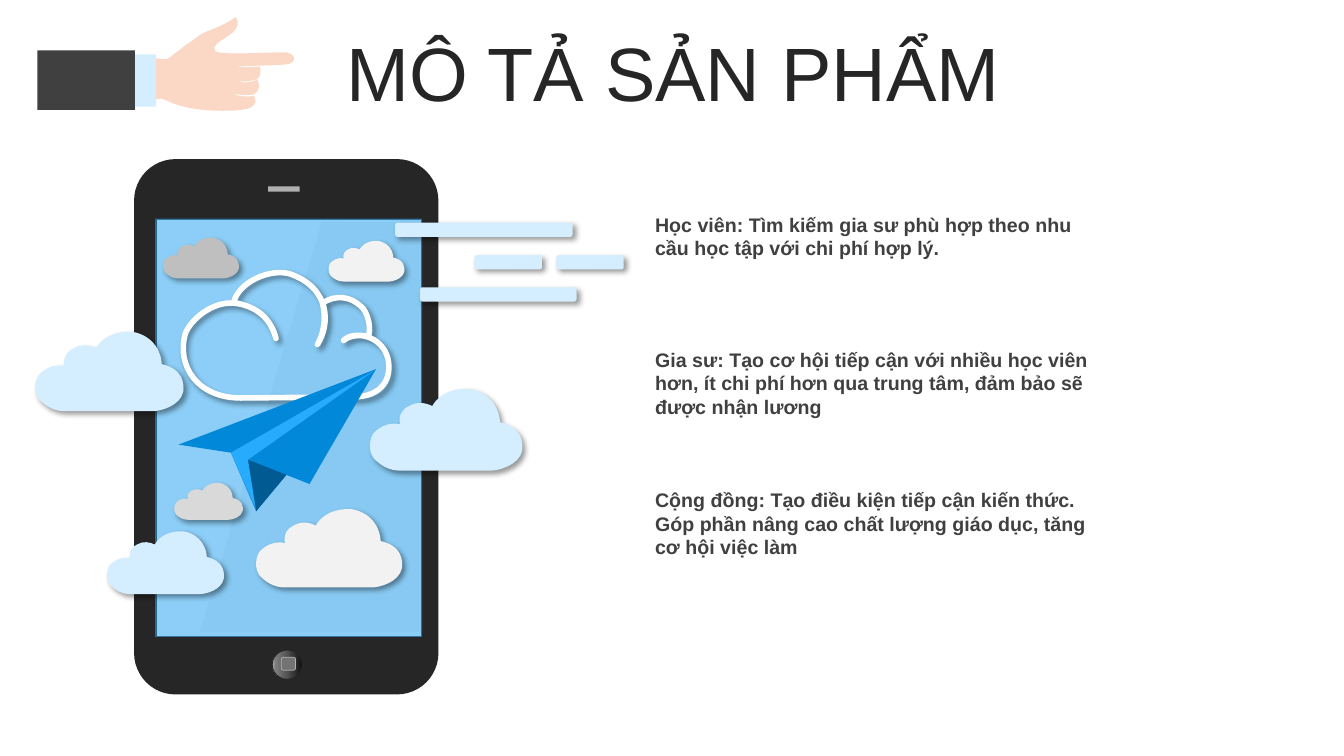
"""Build the product description slide with a phone, clouds and a paper plane."""
from lxml import etree
from pptx import Presentation
from pptx import util as u
from pptx.dml.color import RGBColor
from pptx.enum import shapes, text
from pptx.oxml import parse_xml
from pptx.oxml.ns import qn

NS = 'xmlns:a="http://schemas.openxmlformats.org/drawingml/2006/main"'
RECT = shapes.MSO_SHAPE.RECTANGLE
ROUND = shapes.MSO_SHAPE.ROUNDED_RECTANGLE
OVAL = shapes.MSO_SHAPE.OVAL
UNIT = 0.0254
PALE = "D4EEFF"

CLOUD = [
    (95, 0), (96, 0, 98, 0, 99, 0), (122, 4, 129, 23, 129, 33),
    (151, 38, 152, 53, 151, 61), (148, 76, 127, 81, 120, 81), (30, 81),
    (19, 81, 11, 76, 4, 69), (-2, 61, 0, 50, 3, 45), (6, 41, 16, 32, 30, 35),
    (28, 27, 32, 20, 39, 17), (47, 12, 56, 14, 62, 17), (65, 11, 75, 0, 95, 0)]
SWIRL = [
    (57, 124), (168, 123), (199, 123, 207, 103, 203, 85),
    (197, 61, 168, 57, 159, 67), (164, 62, 176, 61, 183, 63),
    (187, 58, 184, 38, 175, 32), (167, 25, 153, 20, 138, 30),
    (141, 41, 141, 57, 133, 71), (146, 51, 146, 15, 106, 1),
    (86, -5, 55, 9, 50, 29), (65, 33, 84, 37, 92, 65),
    (88, 48, 74, 32, 50, 30), (30, 28, 8, 45, 2, 60), (-7, 91, 13, 124, 57, 124)]
HAND = [
    (80, 0), (70, 7, 60, 11, 52, 14), (44, 17, 40, 22, 30, 28),
    (23, 34, 18, 37, 16, 39), (10, 44, 7, 41, 0, 41), (0, 82),
    (5, 81, 5, 80, 12, 83), (31, 93, 61, 93, 68, 93), (82, 93, 91, 92, 96, 89),
    (101, 85, 100, 84, 98, 78), (92, 80, 84, 78, 78, 77),
    (79, 76, 95, 79, 99, 76), (103, 73, 105, 68, 101, 62),
    (94, 66, 86, 65, 80, 64), (80, 64, 95, 65, 102, 61),
    (105, 58, 105, 56, 104, 49), (95, 50, 90, 50, 79, 49),
    (108, 48, 120, 48, 130, 47), (140, 47, 142, 35, 127, 35),
    (113, 35, 64, 38, 60, 34), (58, 30, 58, 30, 63, 25), (70, 20, 88, 12, 80, 0)]
SHEEN = [(121, 0), (221, 1), (221, 407), (0, 407)]
PLANE = [
    ("0288D9", [(0, 75), (196, 0), (130, 114), (107, 105), (77, 141), (52, 83)]),
    ("27ACFD", [(195, 1), (52, 83), (77, 139), (69, 90)]),
    ("015A91", [(107, 105), (77, 141), (69, 90)])]
CLOUDS = [
    (0.89, 8.36, 3.73, PALE), (9.32, 9.8, 3.84, PALE),
    (4.39, 12.17, 1.73, "D9D9D9"), (4.11, 5.99, 1.91, "BFBFBF"),
    (8.28, 6.07, 1.91, "F2F2F2"), (2.69, 13.39, 2.95, PALE),
    (6.45, 12.83, 3.68, "F2F2F2")]
STREAKS = [(9.96, 5.61, 4.47), (10.59, 7.24, 3.94), (11.96, 6.43, 1.7), (14.02, 6.43, 1.7)]
NOTES = [
    (5.23, 11.2, 1.45, "Học viên: Tìm kiếm gia sư phù hợp theo nhu cầu học tập với chi phí hợp lý."),
    (8.64, 11.56, 2.06, "Gia sư: Tạo cơ hội tiếp cận với nhiều học viên hơn, ít chi phí hơn "
     "qua trung tâm, đảm bảo sẽ được nhận lương"),
    (12.17, 11.79, 2.06, "Cộng đồng: Tạo điều kiện tiếp cận kiến thức. Góp phần nâng cao "
     "chất lượng giáo dục, tăng cơ hội việc làm")]


def color(code):
    """Turn a hex string into a colour."""
    return RGBColor.from_string(code)


def style(shape, fill=None, alpha=None, line=None, width=0):
    """Set fill, opacity in percent and line, without a shadow."""
    shape.shadow.inherit = False
    if fill:
        shape.fill.solid()
        shape.fill.fore_color.rgb = color(fill)
    else:
        shape.fill.background()
    if alpha:
        tone = shape._element.spPr.find(".//" + qn("a:srgbClr"))
        etree.SubElement(tone, qn("a:alpha"), val=str(alpha * 1000))
    if line:
        shape.line.color.rgb = color(line)
        shape.line.width = u.Pt(width)
    else:
        shape.line.fill.background()
    return shape


def shade(shape):
    """Give a shape a soft shadow to the lower right."""
    props = shape._element.spPr
    props.replace(props.find(qn("a:effectLst")), parse_xml(
        f'<a:effectLst {NS}><a:outerShdw blurRad="{u.Pt(4)}" dist="{u.Pt(3)}" '
        'dir="2700000" algn="tl" rotWithShape="0"><a:srgbClr val="000000">'
        '<a:alpha val="40000"/></a:srgbClr></a:outerShdw></a:effectLst>'))


def blend(shape, stops):
    """Fill a shape with a gradient running from right to left."""
    marks = "".join(f'<a:gs pos="{at * 1000}"><a:srgbClr val="{code}"/></a:gs>'
                    for at, code in stops)
    props = shape._element.spPr
    props.replace(props.find(qn("a:solidFill")), parse_xml(
        f'<a:gradFill {NS} rotWithShape="1"><a:gsLst>{marks}</a:gsLst>'
        '<a:lin ang="10800000" scaled="0"/></a:gradFill>'))


def block(slide, kind, left, top, wide, high, fill, **look):
    """Add a preset shape."""
    box = [u.Cm(n) for n in (left, top, wide, high)]
    return style(slide.shapes.add_shape(kind, *box), fill, **look)


def draw(slide, route, left, top, unit=UNIT, **look):
    """Add a closed outline of lines and curves, measured in units of cm."""
    parts = [[(u.Cm(left + x * unit), u.Cm(top + y * unit))
              for x, y in zip(part[::2], part[1::2])] for part in route]
    build = slide.shapes.build_freeform(*parts[0][-1])
    build.add_line_segments([part[-1] for part in parts[1:]], close=True)
    shape = build.convert_to_shape()
    edges = list(shape._element.iter(qn("a:lnTo")))
    for edge, part in zip(edges, parts[1:]):
        if len(part) == 3:
            edge.tag = qn("a:cubicBezTo")
            edge.remove(edge[0])
            for x, y in part:
                etree.SubElement(edge, qn("a:pt"), x=str(x - shape.left), y=str(y - shape.top))
    return style(shape, **look)


def write(slide, left, top, wide, high, words, size, tint, bold=False):
    """Add a wrapped text box and return its frame."""
    frame = slide.shapes.add_textbox(*[u.Cm(n) for n in (left, top, wide, high)]).text_frame
    frame.word_wrap = True
    para = frame.paragraphs[0]
    para.text = words
    font = para.font
    font.name, font.size, font.bold = "Arial", u.Pt(size), bold
    font.color.rgb = color(tint)
    return frame


def phone(slide):
    """Draw the phone and its screen."""
    case = block(slide, ROUND, 3.38, 4.01, 7.67, 13.49, "262626")
    case.adjustments[0] = 0.136
    block(slide, RECT, 6.76, 4.7, 0.79, 0.13, "B0B0B0")
    home = block(slide, OVAL, 6.86, 16.38, 0.76, 0.74, "595959", line="262626")
    blend(home, [(0, "0F0F0F"), (56, "595959"), (91, "808080"), (100, "BFBFBF")])
    block(slide, ROUND, 7.09, 16.56, 0.36, 0.33, "737373", line="B0B0B0", width=0.5)
    block(slide, RECT, 3.96, 5.54, 6.65, 10.49, "F2F2F2")
    draw(slide, SHEEN, 5.03, 5.59, fill="999999", alpha=10)
    block(slide, RECT, 3.91, 5.51, 6.73, 10.54, "27ACFD", alpha=50)


def sky(slide):
    """Draw clouds, streaks and the paper plane."""
    for left, top, wide, fill in CLOUDS:
        shade(draw(slide, CLOUD, left, top, wide / 151, fill=fill))
    swirl = draw(slide, SWIRL, 4.62, 6.88, line="FFFFFF", width=4)
    etree.SubElement(swirl._element.spPr.find(qn("a:ln")), qn("a:round"))
    shade(swirl)
    for left, top, wide in STREAKS:
        shade(block(slide, ROUND, left, top, wide, 0.36, PALE))
    for fill, route in PLANE:
        draw(slide, route, 4.5, 9.3, fill=fill)


def main():
    """Build and save the slide."""
    deck = Presentation()
    deck.slide_width, deck.slide_height = u.Cm(33.87), u.Cm(19.05)
    slide = deck.slides.add_slide(deck.slide_layouts[6])
    phone(slide)
    title = write(slide, 0.89, 0.94, 32.16, 2.01, "MÔ TẢ SẢN PHẨM", 54, "262626")
    title.vertical_anchor = text.MSO_ANCHOR.MIDDLE
    head = title.paragraphs[0]
    head.alignment = text.PP_ALIGN.CENTER
    head.line_spacing, head.space_before = 0.9, u.Pt(10)
    sky(slide)
    draw(slide, HAND, 3.91, 0.43, fill="FBD8C5")
    block(slide, RECT, 3.07, 1.37, 0.86, 1.32, PALE)
    block(slide, RECT, 0.94, 1.27, 2.46, 1.5, "404040")
    for top, wide, high, words in NOTES:
        note = write(slide, 16.26, top, wide, high, words, 14, "404040", True)
        note.auto_size = text.MSO_AUTO_SIZE.SHAPE_TO_FIT_TEXT
    deck.save("out.pptx")


if __name__ == "__main__":
    main()
